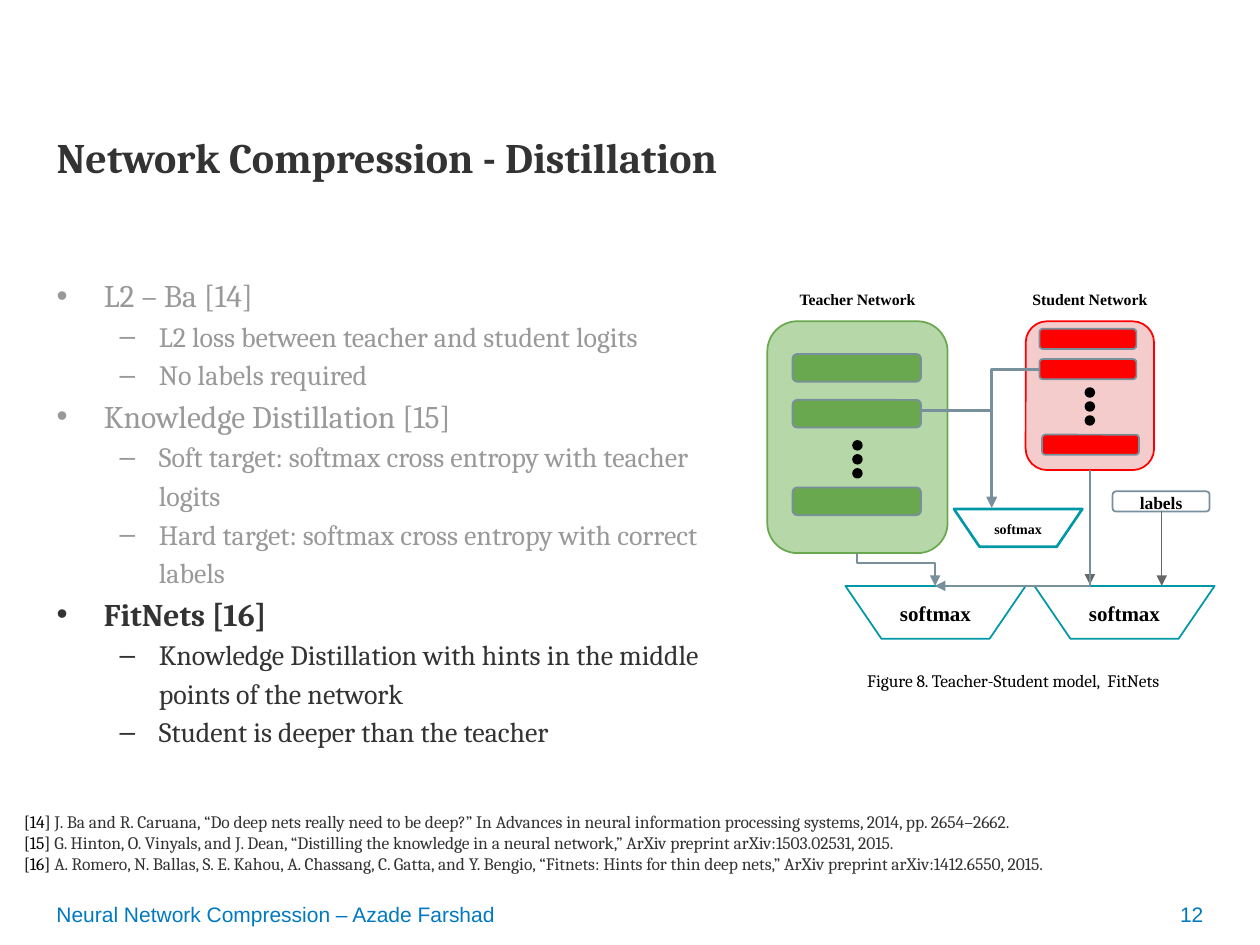
from lxml import etree
from pptx import Presentation
from pptx.dml.color import RGBColor
from pptx.enum.shapes import MSO_CONNECTOR, MSO_SHAPE
from pptx.enum.text import MSO_ANCHOR, MSO_AUTO_SIZE, PP_ALIGN
from pptx.oxml.ns import qn
from pptx.util import Pt

LEFT, CENTER, RIGHT = PP_ALIGN.LEFT, PP_ALIGN.CENTER, PP_ALIGN.RIGHT
TOP, MIDDLE = MSO_ANCHOR.TOP, MSO_ANCHOR.MIDDLE
NO_AUTOFIT = MSO_AUTO_SIZE.NONE
ROUNDED, OVAL = MSO_SHAPE.ROUNDED_RECTANGLE, MSO_SHAPE.OVAL
TRAPEZOID = MSO_SHAPE.FLOWCHART_MANUAL_OPERATION
STRAIGHT, ELBOW = MSO_CONNECTOR.STRAIGHT, MSO_CONNECTOR.ELBOW

BLACK = RGBColor(0x00, 0x00, 0x00)
WHITE = RGBColor(0xFF, 0xFF, 0xFF)
DARK = RGBColor(0x33, 0x33, 0x33)
FADED = RGBColor(0x99, 0x99, 0x99)
BLUE = RGBColor(0x00, 0x79, 0xC1)
TEAL = RGBColor(0x00, 0x97, 0xA7)
SLATE = RGBColor(0x78, 0x90, 0x9C)
GREY = RGBColor(0x66, 0x66, 0x66)
GREEN = RGBColor(0x6A, 0xA8, 0x4F)
PALE_GREEN = RGBColor(0xB6, 0xD7, 0xA8)
RED = RGBColor(0xFF, 0x00, 0x00)
PALE_RED = RGBColor(0xF4, 0xCC, 0xCC)

SERIF, SANS, FIGURE_FONT = "Cambria", "Arial", "Times New Roman"

TOPICS = [
    ("L2 – Ba [14]", FADED, False,
     ["L2 loss between teacher and student logits", "No labels required"]),
    ("Knowledge Distillation [15]", FADED, False,
     ["Soft target: softmax cross entropy with teacher logits",
      "Hard target: softmax cross entropy with correct labels"]),
    ("FitNets [16]", DARK, True,
     ["Knowledge Distillation with hints in the middle points of the network",
      "Student is deeper than the teacher"]),
]
REFERENCES = [
    ("[14] ", "J. Ba and R. Caruana, “Do deep nets really need to be deep?” In Advances in "
              "neural information processing systems, 2014, pp. 2654–2662."),
    ("[15] ", "G. Hinton, O. Vinyals, and J. Dean, “Distilling the knowledge in a neural "
              "network,” ArXiv preprint arXiv:1503.02531, 2015."),
    ("[16] ", "A. Romero, N. Ballas, S. E. Kahou, A. Chassang, C. Gatta, and Y. Bengio, "
              "“Fitnets: Hints for thin deep nets,” ArXiv preprint arXiv:1412.6550, 2015."),
]


def points(*values):
    return [Pt(value) for value in values]


def add_span(para, text, size, font, color, bold=False):
    span = para.add_run()
    span.text = text
    span.font.size, span.font.name, span.font.bold = Pt(size), font, bold
    span.font.color.rgb = color


def prepare_frame(frame, anchor=TOP, inset=3.6):
    frame.word_wrap = True
    frame.auto_size = NO_AUTOFIT
    frame.vertical_anchor = anchor
    frame.margin_left = frame.margin_right = Pt(7.2)
    frame.margin_top = frame.margin_bottom = Pt(inset)
    return frame


def add_frame(page, box, anchor=TOP, inset=3.6):
    return prepare_frame(page.shapes.add_textbox(*points(*box)).text_frame, anchor, inset)


def add_line_of_text(page, box, text, size, font, color, align=LEFT, anchor=TOP,
                     inset=3.6, bold=False):
    para = add_frame(page, box, anchor, inset).paragraphs[0]
    para.alignment = align
    add_span(para, text, size, font, color, bold)


def add_block(page, kind, box, fill, line, weight=1):
    block = page.shapes.add_shape(kind, *points(*box))
    block.shadow.inherit = False
    block.fill.solid()
    block.fill.fore_color.rgb = fill
    block.line.color.rgb = line
    block.line.width = Pt(weight)
    return block


def add_labelled_block(page, kind, box, text, size, line, weight=1):
    frame = prepare_frame(add_block(page, kind, box, WHITE, line, weight).text_frame, MIDDLE)
    frame.word_wrap = False
    para = frame.paragraphs[0]
    para.alignment = CENTER
    para.line_spacing = 1.1
    add_span(para, text, size, FIGURE_FONT, BLACK, True)


def add_arrow(page, kind, start, end, color, weight):
    arrow = page.shapes.add_connector(kind, *points(*start, *end))
    arrow.line.color.rgb = color
    arrow.line.width = Pt(weight)
    etree.SubElement(arrow.line._get_or_add_ln(), qn("a:tailEnd"), type="triangle")
    etree.SubElement(arrow._element.spPr, qn("a:effectLst"))
    return arrow


def add_elbow(page, start, end, weight, preset="bentConnector3", bend=None, downward=False):
    """Bent arrow; a downward one is a sideways one turned by 270 degrees."""
    if downward:
        middle_x, middle_y = (start[0] + end[0]) / 2, (start[1] + end[1]) / 2
        half_x, half_y = (end[0] - start[0]) / 2, (end[1] - start[1]) / 2
        start = (middle_x + half_y, middle_y - half_x)
        end = (middle_x - half_y, middle_y + half_x)
    properties = add_arrow(page, ELBOW, start, end, SLATE, weight)._element.spPr
    if downward:
        properties.find(qn("a:xfrm")).set("rot", str(270 * 60000))
    geometry = properties.find(qn("a:prstGeom"))
    geometry.set("prst", preset)
    if bend is not None:
        guides = geometry.find(qn("a:avLst"))
        etree.SubElement(guides, qn("a:gd"), name="adj1", fmla=f"val {round(bend * 100000)}")


def add_title(page, box, text):
    title = page.shapes.title
    title.left, title.top, title.width, title.height = points(*box)
    para = prepare_frame(title.text_frame).paragraphs[0]
    para.alignment = LEFT
    add_span(para, text, 24, SERIF, DARK, True)


def format_bullet(para, mark, color, indent, hanging):
    properties = para._p.get_or_add_pPr()
    properties.set("marL", str(Pt(indent)))
    properties.set("indent", str(-Pt(hanging)))
    bullet_color = etree.SubElement(properties, qn("a:buClr"))
    etree.SubElement(bullet_color, qn("a:srgbClr"), val=str(color))
    etree.SubElement(properties, qn("a:buFont"), typeface=SANS)
    etree.SubElement(properties, qn("a:buChar"), char=mark)
    para.line_spacing = 1.15


def add_topics(page, box):
    frame = add_frame(page, box)
    for index, (heading, color, bold, details) in enumerate(TOPICS):
        para = frame.add_paragraph() if index else frame.paragraphs[0]
        format_bullet(para, "•", color, 27, 27)
        add_span(para, heading, 18, SERIF, color, bold)
        for detail in details:
            para = frame.add_paragraph()
            para.level = 1
            format_bullet(para, "–", color, 58.5, 22.5)
            add_span(para, detail, 16, SERIF, color)


def add_network(page, box, name, fill, strong, layers, layer_size, dots_top):
    left, top, width, height = box
    caption_width, dot = 88.6, 5
    add_line_of_text(page, (left + (width - caption_width) / 2, top - 21.6, caption_width, 21),
                     name, 9, FIGURE_FONT, BLACK, CENTER, bold=True)
    add_block(page, ROUNDED, box, fill, strong)
    for x, y in layers:
        add_block(page, ROUNDED, (left + x, top + y, *layer_size), strong, SLATE)
    for index in range(3):
        add_block(page, OVAL, (left + (width - dot) / 2, top + dots_top + 8 * index, dot, dot),
                  BLACK, BLACK)


def add_figure(page, box):
    left, top, width, height = box

    def at(x, y, *size):
        return (left + x, top + y, *size)

    add_labelled_block(page, TRAPEZOID, at(106.6, 128.9, 73.4, 21.6), "softmax", 8, TEAL, 1.5)
    for x in (44.6, 152.6):
        add_labelled_block(page, TRAPEZOID, at(x, 172.8, 103, 30.2), "softmax", 12, TEAL)
    add_labelled_block(page, ROUNDED, at(197.3, 118.8, 55.4, 11.5), "labels", 10, SLATE)
    add_network(page, at(147.6, 21.6, 73.4, 85), "Student Network", PALE_RED, RED,
                [(7.9, 4.3), (7.9, 21.6), (9.4, 64.8)], (55.4, 11.5), 38.2)
    add_network(page, at(0, 21.6, 103, 132.5), "Teacher Network", PALE_GREEN, GREEN,
                [(14.4, 18.7), (14.4, 44.9), (14.4, 95)], (73.4, 15.8), 68.4)

    add_arrow(page, STRAIGHT, at(184.3, 106.6), at(184.3, 172.1), GREY, 0.75)
    add_arrow(page, STRAIGHT, at(225.4, 130.3), at(225.4, 172.8), GREY, 0.75)
    add_elbow(page, at(155.5, 49), at(128.2, 127.8), 1.5, "bentConnector2")
    add_elbow(page, at(184.3, 106.6), at(95.8, 172.8), 1, bend=0)
    add_elbow(page, at(87.8, 72), at(128.2, 128.2), 1.5, bend=0.01, downward=True)
    add_elbow(page, at(51.1, 154.1), at(95.8, 172.8), 1, bend=0.31, downward=True)
    add_line_of_text(page, at(25.9, 215.3, 229, 10.8), "Figure 8. Teacher-Student model,  FitNets",
                     10, SERIF, BLACK, CENTER, inset=7.2)


def add_references(page, box):
    frame = add_frame(page, box, inset=7.2)
    for index, (number, citation) in enumerate(REFERENCES):
        para = frame.add_paragraph() if index else frame.paragraphs[0]
        add_span(para, number, 10, SERIF, BLACK)
        add_span(para, citation, 10, SERIF, DARK)


def add_footer(page, box):
    left, top, width, height = box
    number_width = 45.4
    add_line_of_text(page, (left, top, 493, height), "Neural Network Compression – Azade Farshad",
                     12, SANS, BLUE, anchor=MIDDLE)
    add_line_of_text(page, (left + width - number_width, top, number_width, height), "12",
                     12, SANS, BLUE, RIGHT, MIDDLE)


def main():
    deck = Presentation()
    deck.slide_width, deck.slide_height = points(720, 540)
    page = deck.slides.add_slide(deck.slide_layouts[5])
    add_footer(page, (25.2, 510.5, 669.6, 23.8))
    add_title(page, (25.2, 71.3, 669, 68.4), "Network Compression - Distillation")
    add_topics(page, (25.2, 151.2, 399.6, 340.6))
    add_figure(page, (438.5, 162, 256, 226))
    add_references(page, (6.5, 456.5, 706.3, 28))
    deck.save("out.pptx")


if __name__ == "__main__":
    main()
